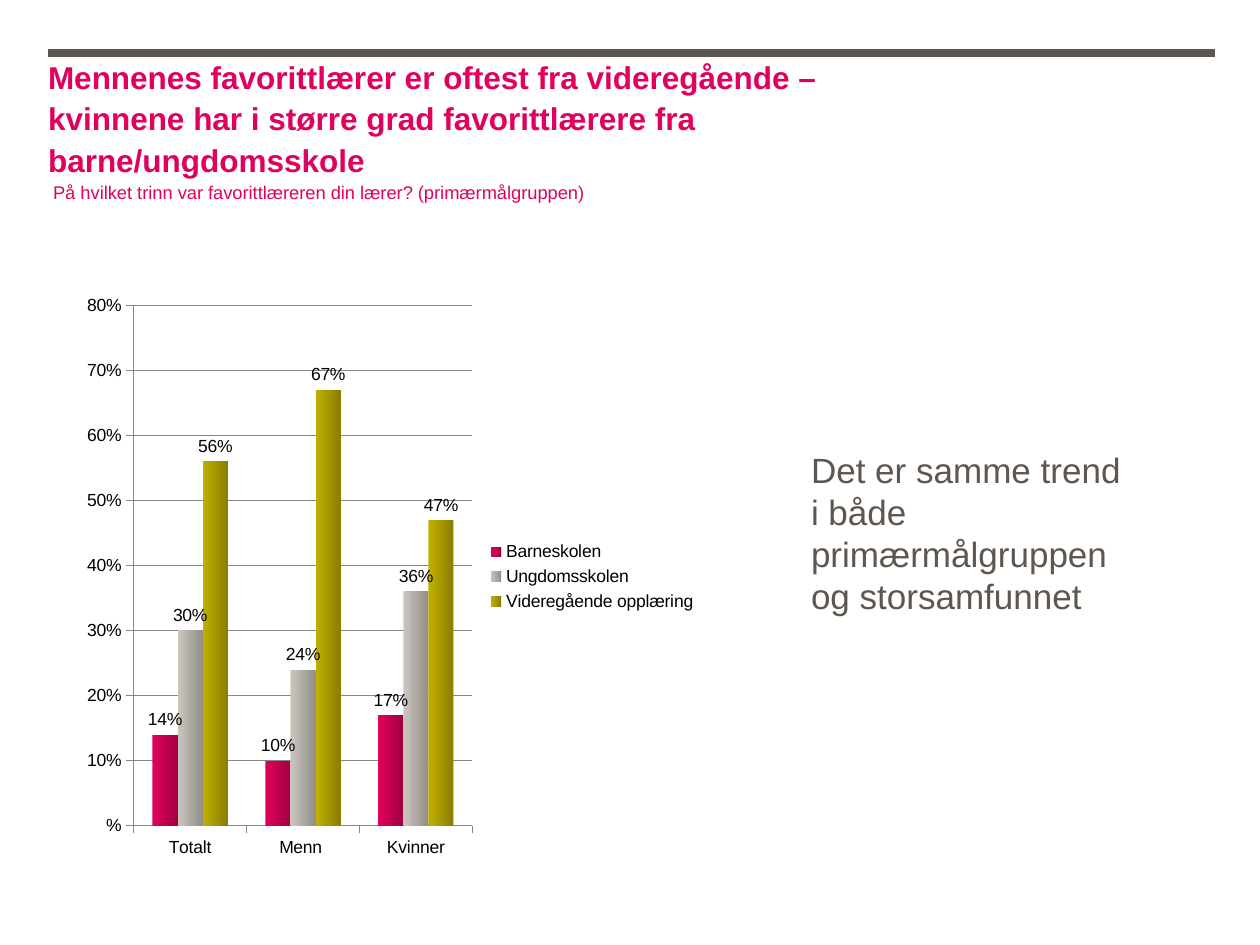
from lxml import etree
from pptx import Presentation
from pptx.chart.data import CategoryChartData
from pptx.dml.color import RGBColor
from pptx.enum.chart import XL_CHART_TYPE as ChartType
from pptx.enum.chart import XL_LABEL_POSITION as LabelPosition
from pptx.enum.chart import XL_LEGEND_POSITION as LegendPosition
from pptx.enum.chart import XL_TICK_MARK as TickMark
from pptx.enum.shapes import MSO_CONNECTOR as Connector
from pptx.enum.text import MSO_AUTO_SIZE as AutoSize
from pptx.oxml.ns import qn
from pptx.util import Cm, Pt

PINK = RGBColor(0xE1, 0x00, 0x5D)
DARK_PINK = RGBColor(0xA0, 0x00, 0x42)
GREY = RGBColor(0xCB, 0xC7, 0xBF)
DARK_GREY = RGBColor(0x92, 0x8F, 0x88)
OLIVE = RGBColor(0xC2, 0xB0, 0x00)
DARK_OLIVE = RGBColor(0x8A, 0x7D, 0x00)
BROWN = RGBColor(0x5F, 0x57, 0x4F)
AXIS_GREY = RGBColor(0x86, 0x86, 0x86)
BLACK = RGBColor(0x00, 0x00, 0x00)

FONT = "Arial"
PERCENT = r"###\%"


class SlideBuilder:
    def __init__(self, slide, font_name):
        self.slide = slide
        self.font_name = font_name

    def style_font(self, font, size, color, bold=False):
        font.name = self.font_name
        font.size = Pt(size)
        font.bold = bold
        font.color.rgb = color

    def add_rule(self, left, right, top, color, width):
        line = self.slide.shapes.add_connector(
            Connector.STRAIGHT, Cm(left), Cm(top), Cm(right), Cm(top))
        line.line.color.rgb = color
        line.line.width = Pt(width)
        etree.SubElement(line._element.spPr, qn("a:effectLst"))

    def add_text(self, box, runs, color, inset=None, spacing=None, grow=False):
        """Each run is (text, size, bold); None stands for a line break."""
        shape = self.slide.shapes.add_textbox(*map(Cm, box))
        frame = shape.text_frame
        frame.word_wrap = True
        if grow:
            frame.auto_size = AutoSize.SHAPE_TO_FIT_TEXT
        if inset is not None:
            frame.margin_left = frame.margin_right = Cm(inset)
            frame.margin_top = frame.margin_bottom = Cm(inset)
        paragraph = frame.paragraphs[0]
        paragraph.line_spacing = spacing
        for item in runs:
            if item is None:
                paragraph.add_line_break()
                continue
            text, size, bold = item
            run = paragraph.add_run()
            run.text = text
            self.style_font(run.font, size, color, bold)

    def add_column_chart(self, box, categories, series_rows):
        data = CategoryChartData(number_format=PERCENT)
        data.categories = categories
        for name, values, *_ in series_rows:
            data.add_series(name, values)
        chart = self.slide.shapes.add_chart(
            ChartType.COLUMN_CLUSTERED, *map(Cm, box), data).chart
        self.style_font(chart.font, 10, BLACK)
        chart.has_title = False
        chart.has_legend = True
        chart.legend.position = LegendPosition.RIGHT
        chart.legend.include_in_layout = False

        # Axes
        value_axis = chart.value_axis
        value_axis.minimum_scale, value_axis.maximum_scale = 0, 80
        value_axis.major_unit = 10
        value_axis.has_major_gridlines = True
        value_axis.major_gridlines.format.line.color.rgb = AXIS_GREY
        value_axis.tick_labels.number_format = PERCENT
        value_axis.tick_labels.number_format_is_linked = False
        for axis in (value_axis, chart.category_axis):
            axis.major_tick_mark = TickMark.OUTSIDE
            axis.format.line.color.rgb = AXIS_GREY

        # Columns with a sideways shade
        plot = chart.plots[0]
        plot.vary_by_categories = False
        plot.gap_width = 150
        plot.overlap = 0
        for series, (_, _, *shades) in zip(plot.series, series_rows):
            fill = series.format.fill
            fill.gradient()
            fill.gradient_angle = 0
            for stop, shade in zip(fill.gradient_stops, shades):
                stop.color.rgb = shade
            labels = series.data_labels
            labels.show_value = True
            labels.number_format = PERCENT
            labels.number_format_is_linked = False
            labels.position = LabelPosition.OUTSIDE_END
            self.style_font(labels.font, 10, BLACK)


def main():
    presentation = Presentation()
    presentation.slide_width = Cm(25.4)
    presentation.slide_height = Cm(19.05)
    slide = presentation.slides.add_slide(presentation.slide_layouts[6])
    builder = SlideBuilder(slide, FONT)

    # Heading
    builder.add_rule(0.97, 24.49, 1.07, BROWN, 4.5)
    builder.add_text(
        (0.97, 1.09, 15.52, 2.82),
        [("Mennenes favorittlærer er oftest fra videregående – kvinnene har "
          "i større grad favorittlærere fra barne/ungdomsskole", 18, True),
         None,
         (" På hvilket trinn var favorittlæreren din lærer? "
          "(primærmålgruppen)", 10.5, False)],
        PINK, inset=0, spacing=1.1)

    # Chart
    builder.add_column_chart(
        (1.5, 5.72, 12.8, 11.81),
        ["Totalt", "Menn ", "Kvinner"],
        [("Barneskolen", (14, 10, 17), PINK, DARK_PINK),
         ("Ungdomsskolen", (30, 24, 36), GREY, DARK_GREY),
         ("Videregående opplæring", (56, 67, 47), OLIVE, DARK_OLIVE)])

    # Comment
    builder.add_text(
        (16.1, 8.92, 7.01, 3.68),
        [("Det er samme trend i både primærmålgruppen og storsamfunnet",
          20, False)],
        BROWN, grow=True)

    presentation.save("out.pptx")


if __name__ == "__main__":
    main()
